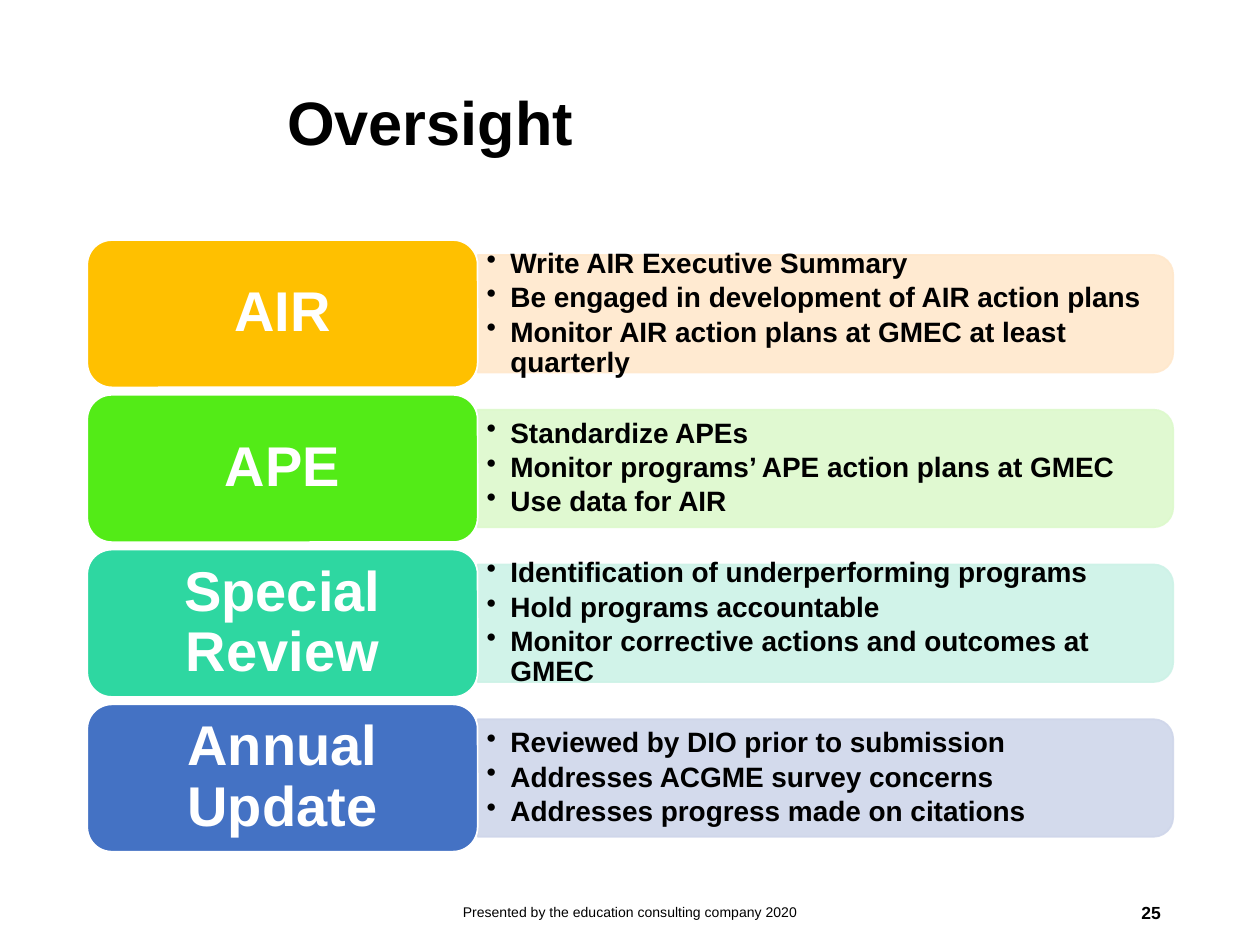
from lxml import etree
from pptx import Presentation
from pptx.dml.color import RGBColor
from pptx.enum import shapes, text
from pptx.oxml import ns
from pptx.util import Cm, Pt

HUES = {
    "black": "000000", "white": "FFFFFF",
    "gold": "FFC000", "cream": "FFE8CC",
    "green": "53EB17", "lime": "DDF9CC",
    "teal": "2ED7A1", "mint": "CDF2E7",
    "blue": "4472C4", "mist": "CFD6EA",
}

# Label, card colour, panel colour, points
ROWS = [
    ("AIR", "gold", "cream", [
        "Write AIR Executive Summary",
        "Be engaged in development of AIR action plans",
        "Monitor AIR action plans at GMEC at least quarterly"]),
    ("APE", "green", "lime", [
        "Standardize APEs",
        "Monitor programs’ APE action plans at GMEC",
        "Use data for AIR"]),
    ("Special Review", "teal", "mint", [
        "Identification of underperforming programs",
        "Hold programs accountable",
        "Monitor corrective actions and outcomes at GMEC"]),
    ("Annual Update", "blue", "mist", [
        "Reviewed by DIO prior to submission",
        "Addresses ACGME survey concerns",
        "Addresses progress made on citations"]),
]

# Row grid in cm
LEFT, TOP, STEP = 1.76, 4.84, 3.12
CARD_W, CARD_H = 7.87, 2.97
PANEL_W, PANEL_H = 14.02, 2.37
TEXT_W, TEXT_H = 13.9, 2.14


def rgb(hue):
    return RGBColor.from_string(HUES[hue])


def set_font(para, size, hue="black", bold=True):
    font = para.font
    font.name, font.size, font.bold = "Arial", Pt(size), bold
    font.color.rgb = rgb(hue)


def set_frame(frame, pad_x, pad_y):
    frame.word_wrap = True
    frame.vertical_anchor = text.MSO_ANCHOR.MIDDLE
    frame.margin_left = frame.margin_right = Cm(pad_x)
    frame.margin_top = frame.margin_bottom = Cm(pad_y)


def add_shape(slide, kind, box, fill, line):
    shape = slide.shapes.add_shape(kind, *map(Cm, box))
    shape.shadow.inherit = False
    shape.fill.solid()
    shape.fill.fore_color.rgb = rgb(fill)
    shape.line.color.rgb = rgb(line)
    shape.line.width = Pt(1)
    return shape


def add_label(slide, box, words, size, align, bold=True, space=1.0):
    frame = slide.shapes.add_textbox(*map(Cm, box)).text_frame
    set_frame(frame, 0.25, 0.13)
    para = frame.paragraphs[0]
    para.text, para.alignment, para.line_spacing = words, align, space
    set_font(para, size, bold=bold)


def add_card(slide, top, words, hue):
    card = add_shape(slide, shapes.MSO_SHAPE.ROUNDED_RECTANGLE,
                     (LEFT, top, CARD_W, CARD_H), hue, "white")
    set_frame(card.text_frame, 0.34, 0.17)
    para = card.text_frame.paragraphs[0]
    para.text, para.line_spacing = words, 0.9
    para.alignment = text.PP_ALIGN.CENTER
    set_font(para, 32, "white")


def add_panel(slide, mid, hue):
    # Turned a quarter so that the two round corners face right
    left = LEFT + CARD_W + (PANEL_W - PANEL_H) / 2
    panel = add_shape(slide, shapes.MSO_SHAPE.ROUND_2_SAME_RECTANGLE,
                      (left, mid - PANEL_W / 2, PANEL_H, PANEL_W), hue, hue)
    panel.rotation = 90
    for tone in panel._element.spPr.iter(ns.qn("a:srgbClr")):
        etree.SubElement(tone, ns.qn("a:alpha"), val="90000")


def add_points(slide, mid, points):
    box = (LEFT + CARD_W, mid - TEXT_H / 2, TEXT_W, TEXT_H)
    frame = slide.shapes.add_textbox(*map(Cm, box)).text_frame
    set_frame(frame, 0.18, 0.09)
    for i, point in enumerate(points):
        para = frame.add_paragraph() if i else frame.paragraphs[0]
        para.text, para.level = point, 1
        para.line_spacing, para.space_after = 0.9, Pt(2.4)
        props = para._p.get_or_add_pPr()
        props.set("marL", str(Cm(0.48)))
        props.set("indent", str(-Cm(0.48)))
        etree.SubElement(props, ns.qn("a:buChar"), char="•")
        set_font(para, 16)


def main():
    deck = Presentation()
    deck.slide_width, deck.slide_height = Cm(25.4), Cm(19.05)
    slide = deck.slides.add_slide(deck.slide_layouts[6])
    align = text.PP_ALIGN

    # Title
    add_label(slide, (5.54, 0.69, 18.14, 3.68), "Oversight", 35, align.LEFT,
              space=0.9)

    # Oversight areas
    for i, (words, hue, tint, points) in enumerate(ROWS):
        top = TOP + i * STEP
        mid = top + CARD_H / 2
        add_panel(slide, mid, tint)
        add_points(slide, mid, points)
        add_card(slide, top, words, hue)

    # Footer and page number
    add_label(slide, (8.41, 17.88, 8.59, 1.02),
              "Presented by the education consulting company 2020",
              8, align.CENTER, bold=False)
    add_label(slide, (17.93, 17.88, 5.72, 1.02), "25", 10, align.RIGHT)

    deck.save("out.pptx")


if __name__ == "__main__":
    main()
